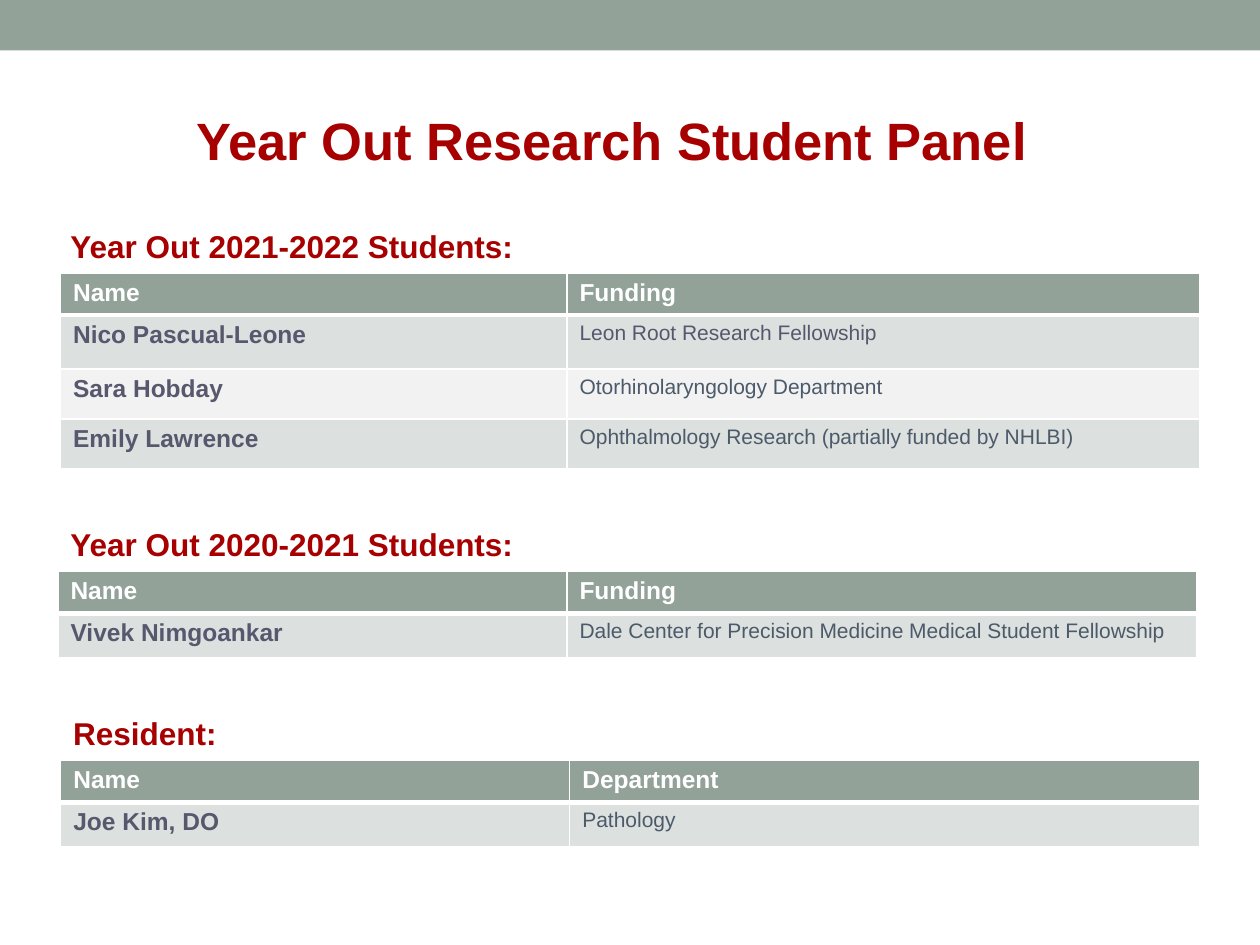
import pptx
import pptx.dml.color
import pptx.enum.shapes
import pptx.enum.text
import pptx.oxml
import pptx.oxml.ns
import pptx.util

Pt = pptx.util.Pt
ALIGN = pptx.enum.text.PP_ALIGN

COLORS = {
    "sage": "93A299",
    "band": "DCE0DE",
    "light": "F2F2F2",
    "red": "A70000",
    "plum": "57576E",
    "slate": "4C5A6A",
    "white": "FFFFFF",
}
HEADER_HEIGHT = 23.2
HEADING_HEIGHT = 28.8

# Heading offset from the table's left, box (left, top, width), first column,
# body row heights, header and body rows (name, detail, detail colour)
SECTIONS = [
    ("Year Out 2021-2022 Students:", -1.44, (34.56, 126, 650.88), 289.44,
     [30.96, 28.6, 28.6], ("Name", "Funding"),
     [("Nico Pascual-Leone", "Leon Root Research Fellowship", "plum"),
      ("Sara Hobday", "Otorhinolaryngology Department", "slate"),
      ("Emily Lawrence", "Ophthalmology Research (partially funded by NHLBI)", "slate")]),
    ("Year Out 2020-2021 Students:", 0, (33.12, 296.4, 650.88), 290.88,
     [25.2], ("Name", "Funding"),
     [("Vivek Nimgoankar",
       "Dale Center for Precision Medicine Medical Student Fellowship", "slate")]),
    ("Resident:", 0, (34.7, 404.4, 650.88), 290.88,
     [25.2], ("Name", "Department"),
     [("Joe Kim, DO", "Pathology", "slate")]),
]


def rgb(name):
    return pptx.dml.color.RGBColor.from_string(COLORS[name])


def write(frame, text, size, color, bold=True, align=ALIGN.LEFT):
    paragraph = frame.paragraphs[0]
    paragraph.alignment = align
    run = paragraph.add_run()
    run.text = text
    for attribute, value in {"size": Pt(size), "name": "Arial", "bold": bold}.items():
        setattr(run.font, attribute, value)
    run.font.color.rgb = rgb(color)


def add_label(slide, box, text, size, align=ALIGN.LEFT):
    frame = slide.shapes.add_textbox(*map(Pt, box)).text_frame
    frame.word_wrap = True
    write(frame, text, size, "red", align=align)


def set_borders(cell, top, bottom):
    properties = cell._tc.get_or_add_tcPr()
    widths = {"lnL": 1, "lnR": 1, "lnT": top, "lnB": bottom}
    for position, (side, width) in enumerate(widths.items()):
        line = pptx.oxml.parse_xml(
            f'<a:{side} {pptx.oxml.ns.nsdecls("a")} w="{Pt(width)}"><a:solidFill>'
            f'<a:srgbClr val="{COLORS["white"]}"/></a:solidFill></a:{side}>')
        properties.insert(position, line)


def fill_cell(cell, text, size, color, bold, fill, top, bottom):
    margins = {"margin_left": 7.2, "margin_right": 7.2,
               "margin_top": 3.6, "margin_bottom": 3.6}
    for attribute, value in margins.items():
        setattr(cell, attribute, Pt(value))
    cell.fill.solid()
    cell.fill.fore_color.rgb = rgb(fill)
    write(cell.text_frame, text, size, color, bold)
    set_borders(cell, top, bottom)


def add_banner(slide, box):
    banner = slide.shapes.add_shape(
        pptx.enum.shapes.MSO_SHAPE.RECTANGLE, *map(Pt, box))
    banner.shadow.inherit = False
    banner.fill.solid()
    banner.fill.fore_color.rgb = rgb("sage")
    banner.line.fill.background()


def add_section(slide, heading, offset, box, name_width, heights, header, people):
    left, top, width = box
    add_label(slide, (left + offset, top, 642.24, HEADING_HEIGHT), heading, 18)

    # Table directly below the heading
    row_heights = [HEADER_HEIGHT, *heights]
    table = slide.shapes.add_table(
        len(row_heights), 2, Pt(left), Pt(top + 30), Pt(width),
        Pt(sum(row_heights))).table
    for column, column_width in zip(table.columns, (name_width, width - name_width)):
        column.width = Pt(column_width)
    for row, height in zip(table.rows, row_heights):
        row.height = Pt(height)

    # Header row, then banded body rows
    for column, title in enumerate(header):
        fill_cell(table.cell(0, column), title, 14, "white", True, "sage", 1, 3)
    for row, (name, detail, color) in enumerate(people, 1):
        band = "band" if row % 2 else "light"
        rule = 3 if row == 1 else 1
        fill_cell(table.cell(row, 0), name, 14, "plum", True, band, rule, 1)
        fill_cell(table.cell(row, 1), detail, 12, color, False, band, rule, 1)


def main():
    deck = pptx.Presentation()
    deck.slide_width, deck.slide_height = Pt(720), Pt(540)
    slide = deck.slides.add_slide(deck.slide_layouts[6])
    add_banner(slide, (0, 0, 720, 28.8))
    add_label(slide, (23.76, 58.32, 660.24, 43.92),
              "Year Out Research Student Panel ", 30, ALIGN.CENTER)
    for section in SECTIONS:
        add_section(slide, *section)
    deck.save("out.pptx")


if __name__ == "__main__":
    main()
